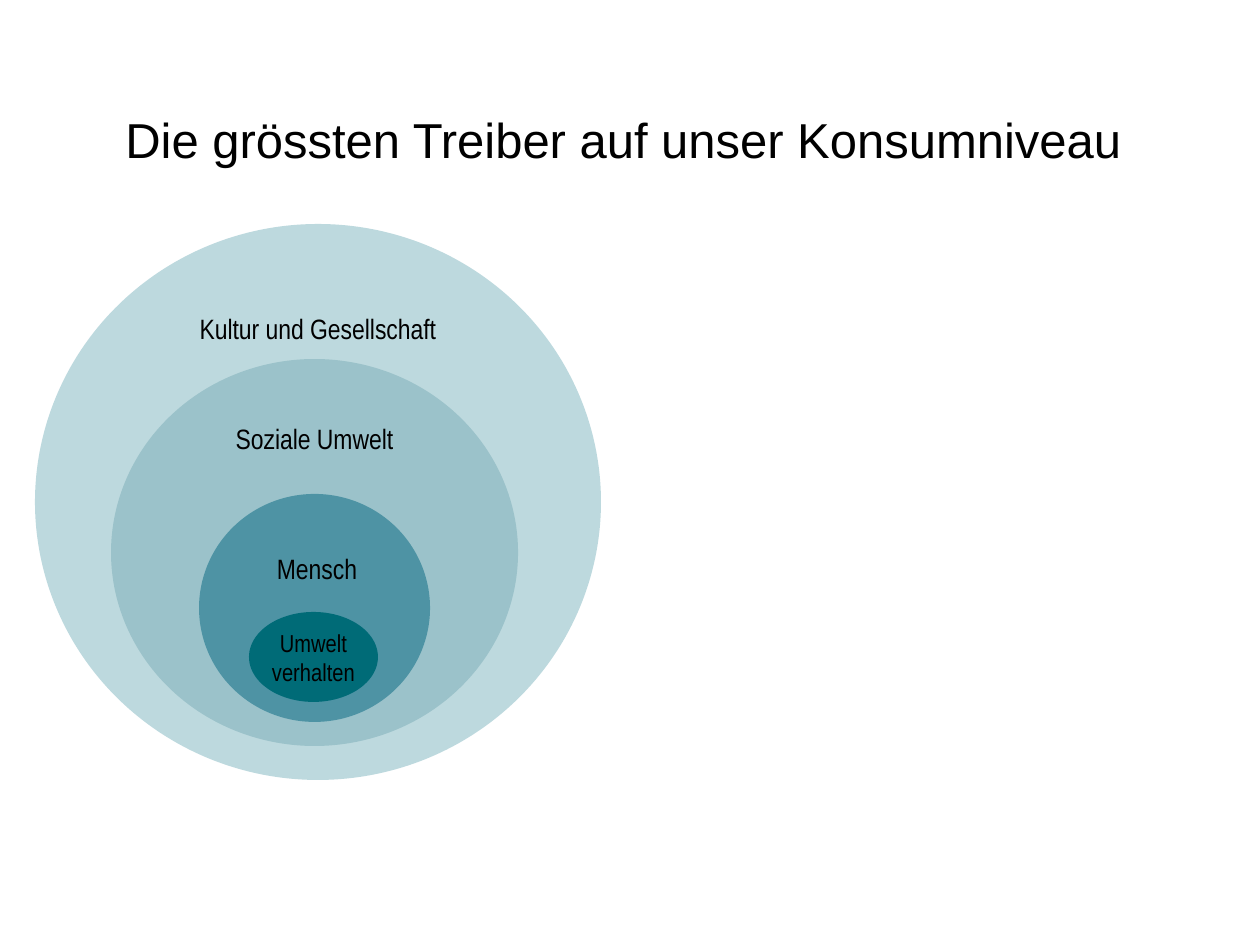
from dataclasses import dataclass

from pptx import Presentation
from pptx import util as u
from pptx.dml.color import RGBColor
from pptx.enum import shapes, text


@dataclass(frozen=True)
class Theme:
    """Colours, fonts and type sizes of the slide."""
    ink: str = "000000"
    culture: str = "BDD9DE"
    social: str = "9BC2CA"
    person: str = "4E93A4"
    behaviour: str = "006B77"
    title_font: str = "Arial"
    label_font: str = "Arial Narrow"
    title_size: int = 28
    label_size: int = 16
    core_size: int = 14


THEME = Theme()
TOP, MIDDLE = text.MSO_ANCHOR.TOP, text.MSO_ANCHOR.MIDDLE


def px(n):
    """Convert pixels at 126 to the inch into EMU."""
    return u.Emu(round(n * 914400 / 126))


def write(sp, lines, size, font, align, anchor=TOP, wrap=False):
    """Fill a shape with one styled paragraph per line."""
    tf = sp.text_frame
    tf.word_wrap = wrap
    tf.vertical_anchor = anchor
    tf.text = "\n".join(lines)
    for p in tf.paragraphs:
        p.alignment = align
        p.font.size = u.Pt(size)
        p.font.name = font
        p.font.color.rgb = RGBColor.from_string(THEME.ink)


def add_title(s, box, title):
    """Add the indented slide title."""
    sp = s.shapes.add_textbox(*map(px, box))
    write(sp, [title], THEME.title_size, THEME.title_font,
          text.PP_ALIGN.LEFT, wrap=True)
    p = sp.text_frame.paragraphs[0]
    p.line_spacing = 0.95
    pPr = p._p.get_or_add_pPr()
    pPr.set("marL", str(px(110)))
    pPr.set("indent", "0")


def add_label(sp, lines, size=THEME.label_size, anchor=TOP):
    """Centre a narrow label in a shape."""
    write(sp, lines, size, THEME.label_font, text.PP_ALIGN.CENTER, anchor)


def add_ring(s, box, fill):
    """Add a borderless filled ellipse."""
    sp = s.shapes.add_shape(shapes.MSO_SHAPE.OVAL, *map(px, box))
    sp.shadow.inherit = False
    sp.fill.solid()
    sp.fill.fore_color.rgb = RGBColor.from_string(fill)
    sp.line.fill.background()
    return sp


def main():
    """Build the slide of nested influences and save it."""
    prs = Presentation()
    prs.slide_width, prs.slide_height = px(1260), px(945)
    s = prs.slides.add_slide(prs.slide_layouts[6])
    add_title(s, (3, 108, 1215, 91),
              "Die grössten Treiber auf unser Konsumniveau")
    culture = add_ring(s, (35, 224, 566, 556), THEME.culture)
    add_label(culture, ["Kultur und Gesellschaft"])
    social = add_ring(s, (111, 359, 407, 387), THEME.social)
    add_label(social, ["Soziale Umwelt"])
    add_ring(s, (199, 494, 231, 228), THEME.person)
    behaviour = add_ring(s, (249, 612, 129, 90), THEME.behaviour)
    add_label(behaviour, ["Umwelt", "verhalten"], THEME.core_size, MIDDLE)
    person = s.shapes.add_textbox(*map(px, (258, 549, 118, 39)))
    add_label(person, ["Mensch"], anchor=MIDDLE)
    prs.save("out.pptx")


if __name__ == "__main__":
    main()
